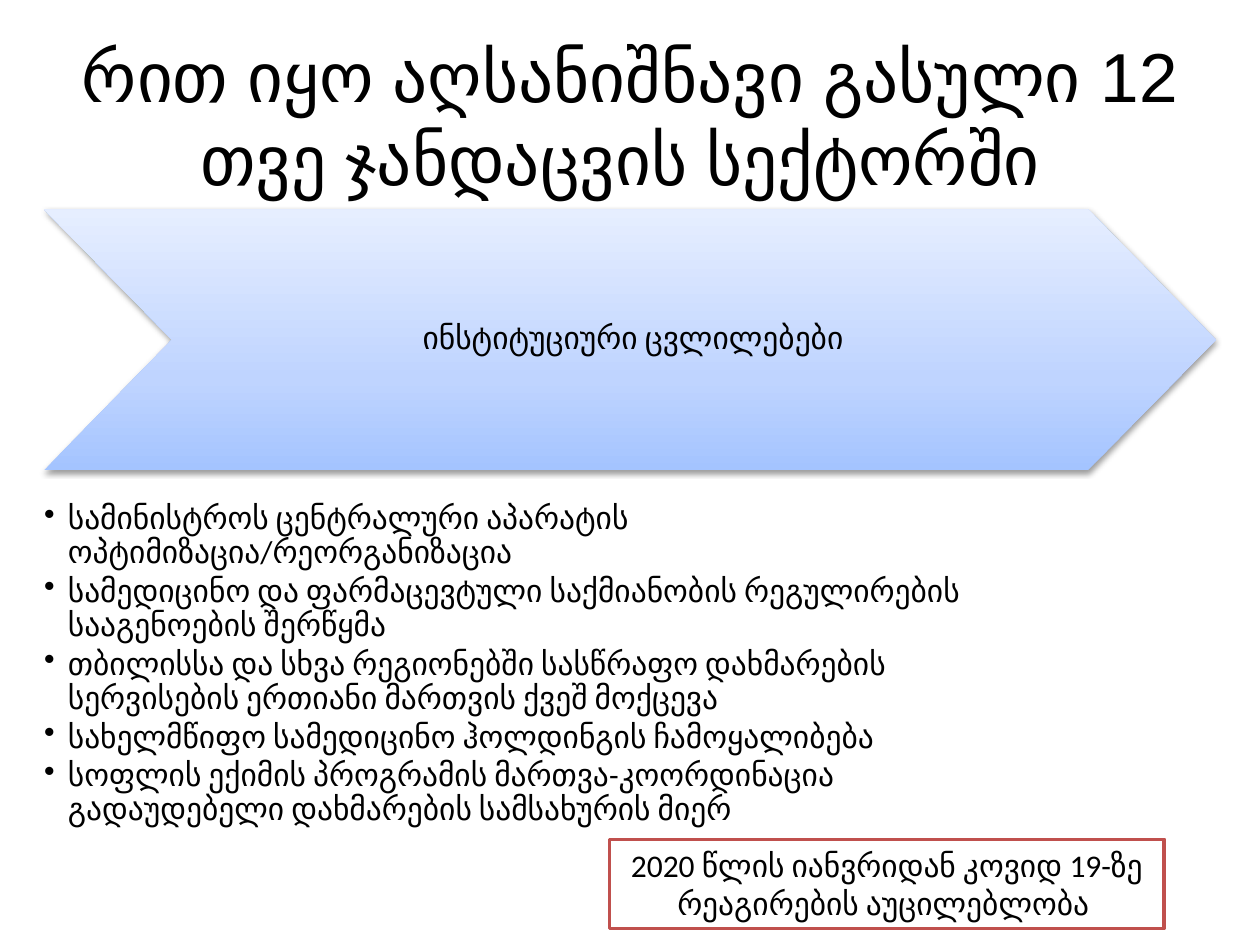
import pptx
import pptx.dml.color
import pptx.enum.shapes
import pptx.enum.text
import pptx.oxml
import pptx.util

Cm = pptx.util.Cm
Pt = pptx.util.Pt
ALIGN = pptx.enum.text.PP_ALIGN
ANCHOR = pptx.enum.text.MSO_ANCHOR
SHAPE = pptx.enum.shapes.MSO_SHAPE
NS = 'xmlns:a="http://schemas.openxmlformats.org/drawingml/2006/main"'
HUES = {"ink": "000000", "paper": "FFFFFF", "edge": "C0504D",
        "deep": "A4C4FF", "mid": "BFD4FF", "pale": "E6EEFF"}
ITEMS = [
    "სამინისტროს ცენტრალური აპარატის ოპტიმიზაცია/რეორგანიზაცია",
    "სამედიცინო და ფარმაცევტული საქმიანობის რეგულირების სააგენოების შერწყმა",
    "თბილისსა და სხვა რეგიონებში სასწრაფო დახმარების სერვისების ერთიანი მართვის ქვეშ მოქცევა",
    "სახელმწიფო სამედიცინო ჰოლდინგის ჩამოყალიბება",
    "სოფლის ექიმის პროგრამის მართვა-კოორდინაცია გადაუდებელი დახმარების სამსახურის მიერ",
]


def tint(name):
    """Return the named colour."""
    return pptx.dml.color.RGBColor.from_string(HUES[name])


def dot(para):
    """Give a paragraph a hanging bullet."""
    props = para._p.get_or_add_pPr()
    props.set("marL", str(Cm(0.48)))
    props.set("indent", str(-Cm(0.48)))
    props.append(pptx.oxml.parse_xml(f'<a:buChar {NS} char="•"/>'))


def write(shape, *lines, size=18, font="Calibri", align=ALIGN.CENTER,
          anchor=ANCHOR.MIDDLE, pads=(0.25, 0.13, 0.25, 0.13),
          lead=1.0, after=0, bullet=False):
    """Fill a shape with formatted paragraphs."""
    frame = shape.text_frame
    frame.word_wrap = True
    frame.vertical_anchor = anchor
    (frame.margin_left, frame.margin_top,
     frame.margin_right, frame.margin_bottom) = map(Cm, pads)
    for i, line in enumerate(lines):
        para = frame.add_paragraph() if i else frame.paragraphs[0]
        para.alignment = align
        para.line_spacing = lead
        para.space_after = Pt(after)
        if bullet:
            dot(para)
        run = para.add_run()
        run.text = line
        run.font.size = Pt(size)
        run.font.name = font
        run.font.color.rgb = tint("ink")


def area(slide, *box):
    """Add an empty text box."""
    return slide.shapes.add_textbox(*map(Cm, box))


def arrow(slide, *box):
    """Add the shaded chevron with its soft shadow."""
    shape = slide.shapes.add_shape(SHAPE.CHEVRON, *map(Cm, box))
    shape.adjustments[0] = 0.49
    shape.line.fill.background()
    stops = "".join(
        f'<a:gs pos="{pos}"><a:srgbClr val="{HUES[name]}"/></a:gs>'
        for pos, name in ((0, "deep"), (35000, "mid"), (100000, "pale")))
    fill = pptx.oxml.parse_xml(
        f'<a:gradFill {NS} rotWithShape="1"><a:gsLst>{stops}</a:gsLst>'
        '<a:lin ang="16200000" scaled="0"/></a:gradFill>')
    shade = pptx.oxml.parse_xml(
        f'<a:effectLst {NS}><a:outerShdw blurRad="{Pt(3.1)}" dist="{Pt(1.6)}" '
        f'dir="5400000" rotWithShape="0"><a:srgbClr val="{HUES["ink"]}">'
        '<a:alpha val="38000"/></a:srgbClr></a:outerShdw></a:effectLst>')
    props = shape._element.spPr
    props.find(pptx.oxml.ns.qn("a:prstGeom")).addnext(fill)
    props.append(shade)


def frame(slide, *box):
    """Add a white outlined rectangle."""
    shape = slide.shapes.add_shape(SHAPE.RECTANGLE, *map(Cm, box))
    shape.shadow.inherit = False
    shape.fill.solid()
    shape.fill.fore_color.rgb = tint("paper")
    shape.line.color.rgb = tint("edge")
    shape.line.width = Pt(2)
    return shape


def main():
    """Build the slide and save it."""
    deck = pptx.Presentation()
    deck.slide_width, deck.slide_height = Cm(25.4), Cm(19.05)
    slide = deck.slides.add_slide(deck.slide_layouts[6])
    write(area(slide, 1.27, 0.76, 22.86, 3.18),
          "რით იყო აღსანიშნავი გასული 12 თვე ჯანდაცვის სექტორში ",
          size=39.6, font="Arial")
    arrow(slide, 0.89, 4.22, 23.62, 5.26)
    write(area(slide, 3.51, 4.22, 18.39, 5.26), "ინსტიტუციური ცვლილებები",
          pads=(0.2, 0.08, 0.08, 0.08), lead=0.9, after=6.3)
    write(area(slide, 0.89, 10.13, 18.9, 6.78), *ITEMS, align=ALIGN.LEFT,
          anchor=ANCHOR.TOP, pads=(0, 0, 0, 0), lead=0.9, after=2.7,
          bullet=True)
    write(frame(slide, 12.29, 16.92, 11.18, 1.8),
          "2020 წლის იანვრიდან კოვიდ 19-ზე რეაგირების აუცილებლობა ",
          anchor=ANCHOR.TOP)
    deck.save("out.pptx")


if __name__ == "__main__":
    main()
